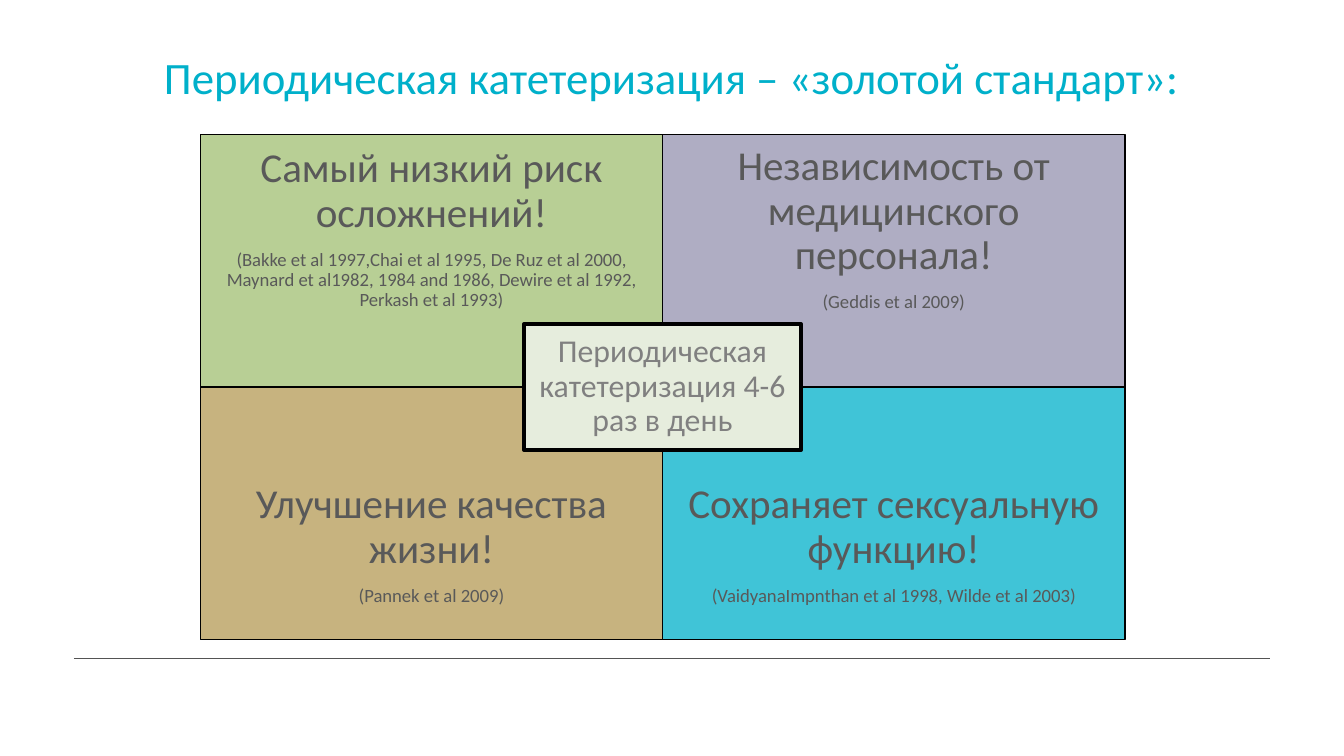
from typing import NamedTuple

from pptx import Presentation
from pptx.dml.color import RGBColor
from pptx.enum import shapes, text
from pptx.oxml.ns import qn
from pptx.util import Inches, Pt

FONT = "Calibri"
LEFT, TOP = 1.49, 1.0
WIDTH, HEIGHT = 3.44, 1.88
BODY = 1.41  # height of the text area at the outer edge of a tile
HUB_W, HUB_H = 2.06, 0.94


class Box(NamedTuple):
    x: float
    y: float
    w: float
    h: float


class Line(NamedTuple):
    words: str
    size: float
    color: str


class Tile(NamedTuple):
    col: int
    row: int
    fill: str
    claim: str
    source: str


TILES = [
    Tile(0, 0, "B8CF95", "Самый низкий риск осложнений!",
         "(Bakke et al 1997,Chai et al 1995, De Ruz et al 2000, "
         "Maynard et al1982, 1984 and 1986, Dewire et al 1992, Perkash et al 1993)"),
    Tile(1, 0, "AFADC3", "Независимость от медицинского персонала!",
         "(Geddis et al 2009)"),
    Tile(0, 1, "C7B37F", "Улучшение качества жизни!", "(Pannek et al 2009)"),
    Tile(1, 1, "40C4D7", "Сохраняет сексуальную функцию!",
         "(VaidyanaImpnthan et al 1998, Wilde et al 2003)"),
]


def tint(code: str) -> RGBColor:
    return RGBColor.from_string(code)


def place(box: Box) -> list:
    return [Inches(n) for n in box]


def add_rect(slide, box: Box, fill: str, weight: float) -> None:
    rect = slide.shapes.add_shape(shapes.MSO_SHAPE.RECTANGLE, *place(box))
    rect.shadow.inherit = False
    rect.fill.solid()
    rect.fill.fore_color.rgb = tint(fill)
    rect.line.color.rgb = tint("000000")
    rect.line.width = Pt(weight)


def add_text(slide, box: Box, lines: list[Line], inset: float,
             anchor=text.MSO_ANCHOR.MIDDLE, align=text.PP_ALIGN.CENTER,
             pitch: float = 0.9, after: float = 0.35) -> None:
    """Write one paragraph per line; after is a share of the text size."""
    frame = slide.shapes.add_textbox(*place(box)).text_frame
    frame.word_wrap = True
    frame.vertical_anchor = anchor
    frame.margin_left = frame.margin_right = Inches(inset)
    frame.margin_top = frame.margin_bottom = Inches(inset)
    frame.text = "\n".join(line.words for line in lines)
    for para, line in zip(frame.paragraphs, lines):
        para.alignment = align
        para.line_spacing = pitch
        para.space_after = Pt(line.size * after)
        font = para.runs[0].font
        font.name = FONT
        font.size = Pt(line.size)
        font.color.rgb = tint(line.color)


def add_tile(slide, tile: Tile) -> None:
    x, y = LEFT + tile.col * WIDTH, TOP + tile.row * HEIGHT
    add_rect(slide, Box(x, y, WIDTH, HEIGHT), tile.fill, 0.75)
    body = Box(x, y + tile.row * (HEIGHT - BODY), WIDTH, BODY)
    add_text(slide, body, [Line(tile.claim, 22, "595959"),
                           Line(tile.source, 10, "595959")], 0.17)


def add_rule(slide) -> None:
    rule = slide.shapes.add_connector(
        shapes.MSO_CONNECTOR.STRAIGHT,
        Inches(0.55), Inches(4.9), Inches(9.45), Inches(4.9))
    rule.line.color.rgb = tint("535353")
    rule.line.width = Pt(0.5)
    props = rule._element.spPr
    props.append(props.makeelement(qn("a:effectLst"), {}))


def main() -> None:
    deck = Presentation()
    deck.slide_width = Inches(10)
    deck.slide_height = Inches(10 * 9 / 16)
    slide = deck.slides.add_slide(deck.slide_layouts[6])
    add_rule(slide)
    add_text(slide, Box(1.22, 0.26, 7.72, 0.51),
             [Line("Периодическая катетеризация – «золотой стандарт»:", 24, "00B0CA")],
             0, text.MSO_ANCHOR.BOTTOM, text.PP_ALIGN.LEFT, 0.85, 0)
    for tile in TILES:
        add_tile(slide, tile)
    hub = Box(LEFT + WIDTH - HUB_W / 2, TOP + HEIGHT - HUB_H / 2, HUB_W, HUB_H)
    add_rect(slide, hub, "E6EDDD", 2)
    add_text(slide, hub,
             [Line("Периодическая катетеризация 4-6 раз в день", 17, "808080")], 0.07)
    deck.save("out.pptx")


if __name__ == "__main__":
    main()
